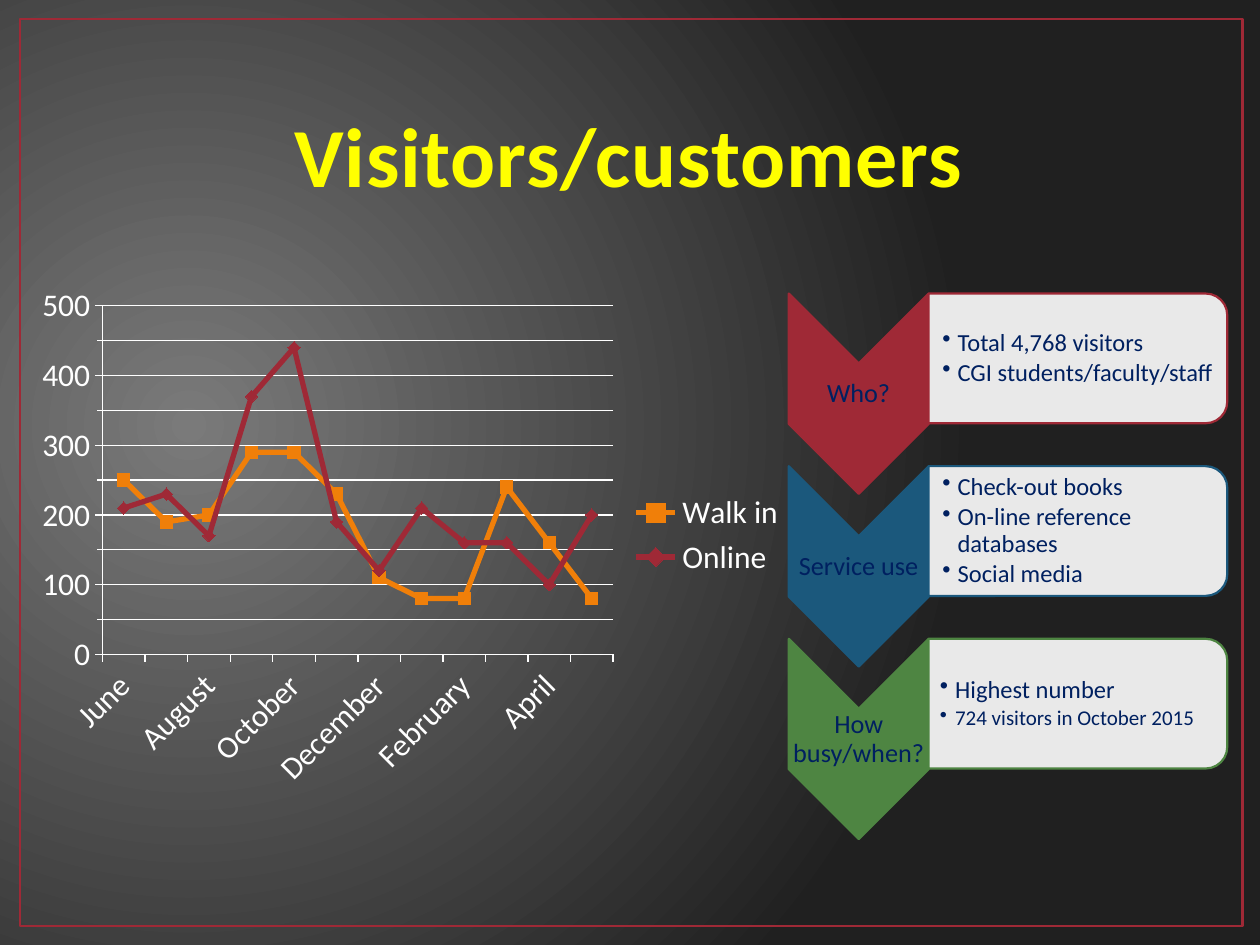
from dataclasses import dataclass

from lxml import etree
from pptx import Presentation
from pptx import util as u
from pptx.chart.data import CategoryChartData
from pptx.dml.color import RGBColor
from pptx.enum import chart as charts, shapes, text
from pptx.oxml.ns import qn

FONT = "Calibri"
NAVY = "002060"
WHITE = "FFFFFF"
STEP = 1.37


@dataclass
class Bullet:
    wording: str
    size: float = 14


@dataclass
class Topic:
    label: str
    color: str
    bullets: list[Bullet]
    inset: float = 0.11


TOPICS = [
    Topic("Who?", "9F2936", [Bullet("Total 4,768 visitors"), Bullet("CGI students/faculty/staff")]),
    Topic("Service use", "1B587C", [Bullet("Check-out books"), Bullet("On-line reference databases"),
                                    Bullet("Social media")]),
    Topic("How busy/when?", "4E8542", [Bullet("Highest number"),
                                       Bullet("724 visitors in October 2015", 12)], 0.09),
]
MONTHS = ["June", "July", "August", "September", "October", "November",
          "December", "January", "February", "March", "April", "May"]
SERIES = [
    ("Walk in", "F07F09", charts.XL_MARKER_STYLE.SQUARE,
     [250, 190, 200, 290, 290, 230, 110, 80, 80, 240, 160, 80]),
    ("Online", "9F2936", charts.XL_MARKER_STYLE.DIAMOND,
     [210, 230, 170, 370, 440, 190, 120, 210, 160, 160, 100, 200]),
]


def rgb(color: str) -> RGBColor:
    return RGBColor.from_string(color)


def add_child(parent, tag: str, **attributes: str):
    return etree.SubElement(parent, qn(tag), attributes)


def style_font(font, size: float, color: str, bold: bool = False) -> None:
    font.name = FONT
    font.size = u.Pt(size)
    font.bold = bold
    font.color.rgb = rgb(color)


def add_background(slide) -> None:
    fill = slide.background.fill
    fill.gradient()
    for stop, color in zip(fill.gradient_stops, ("7A7A7A", "202020")):
        stop.color.rgb = rgb(color)
    gradient = slide.element.find(".//" + qn("a:gradFill"))
    gradient.remove(gradient.find(qn("a:lin")))
    circle = add_child(gradient, "a:path", path="circle")
    add_child(circle, "a:fillToRect", l="15000", t="50000", r="85000", b="60000")


def add_shape(slide, kind, box: tuple, line: str, width: float, fill: str = "", rotation: float = 0):
    shape = slide.shapes.add_shape(kind, *map(u.Inches, box))
    shape.shadow.inherit = False
    shape.rotation = rotation
    style_line(shape.line, line, width)
    if fill:
        shape.fill.solid()
        shape.fill.fore_color.rgb = rgb(fill)
    else:
        shape.fill.background()
    return shape


def add_text_frame(slide, box: tuple, anchor, left_inset: float, inset: float):
    frame = slide.shapes.add_textbox(*map(u.Inches, box)).text_frame
    frame.word_wrap = True
    frame.vertical_anchor = anchor
    frame.margin_left = u.Inches(left_inset)
    frame.margin_top = frame.margin_right = frame.margin_bottom = u.Inches(inset)
    return frame


def set_spacing(paragraph, after: int):
    paragraph.line_spacing = 0.9
    properties = paragraph._p.get_or_add_pPr()
    add_child(add_child(properties, "a:spcAft"), "a:spcPct", val=str(after * 1000))
    return properties


def add_title(slide) -> None:
    frame = add_text_frame(slide, (0.75, 0.84, 8.43, 0.83), text.MSO_ANCHOR.BOTTOM, 0.1, 0.05)
    frame.text = "Visitors/customers"
    paragraph = frame.paragraphs[0]
    paragraph.alignment = text.PP_ALIGN.CENTER
    style_font(paragraph.runs[0].font, 48, "FFFF00", True)
    paragraph.runs[0]._r.get_or_add_rPr().set("spc", "50")


def add_topic(slide, topic: Topic, offset: float) -> None:
    add_shape(slide, shapes.MSO_SHAPE.CHEVRON, (6.02, 2.57 + offset, 1.59, 1.11),
              topic.color, 1.25, topic.color, 90)
    panel = add_shape(slide, shapes.MSO_SHAPE.ROUND_2_SAME_RECTANGLE, (8.04, 1.66 + offset, 1.03, 2.37),
                      topic.color, 1.25, WHITE, 90)
    panel_color = panel._element.spPr.find(qn("a:solidFill")).find(qn("a:srgbClr"))
    add_child(panel_color, "a:alpha", val="90000")

    label = add_text_frame(slide, (6.26, 2.89 + offset, 1.11, 0.48), text.MSO_ANCHOR.MIDDLE, 0.01, 0.01)
    label.text = topic.label
    paragraph = label.paragraphs[0]
    paragraph.alignment = text.PP_ALIGN.CENTER
    set_spacing(paragraph, 35)
    style_font(paragraph.runs[0].font, 15, NAVY)

    details = add_text_frame(slide, (7.37, 2.38 + offset, 2.32, 0.93), text.MSO_ANCHOR.MIDDLE,
                             topic.inset, 0.01)
    details.text = "\n".join(bullet.wording for bullet in topic.bullets)
    for paragraph, bullet in zip(details.paragraphs, topic.bullets):
        paragraph.level = 1
        properties = set_spacing(paragraph, 15)
        indent = u.Inches(0.12)
        properties.set("marL", str(indent))
        properties.set("indent", str(-indent))
        add_child(properties, "a:buChar", char="•")
        style_font(paragraph.runs[0].font, bullet.size, NAVY)


def style_line(line, color: str, width: float) -> None:
    line.color.rgb = rgb(color)
    line.width = u.Pt(width)


def add_visitor_chart(slide) -> None:
    data = CategoryChartData()
    data.categories = MONTHS
    for name, _, _, values in SERIES:
        data.add_series(name, values)
    chart = slide.shapes.add_chart(charts.XL_CHART_TYPE.LINE_MARKERS,
                                   *map(u.Inches, (0.2, 2.18, 6.14, 4.13)), data).chart
    style_font(chart.font, 18, WHITE)
    chart.has_title = False
    chart.has_legend = True
    chart.legend.position = charts.XL_LEGEND_POSITION.RIGHT
    chart.legend.include_in_layout = False
    chart.plots[0].vary_by_categories = False
    for series, (_, color, marker, _) in zip(chart.plots[0].series, SERIES):
        series.smooth = False
        style_line(series.format.line, color, 3)
        series.marker.style = marker
        series.marker.size = 7
        series.marker.format.fill.solid()
        series.marker.format.fill.fore_color.rgb = rgb(color)
        style_line(series.marker.format.line, color, 0.75)

    months, visitors = chart.category_axis, chart.value_axis
    for axis in (months, visitors):
        axis.major_tick_mark = charts.XL_TICK_MARK.OUTSIDE
        style_line(axis.format.line, WHITE, 0.75)
    style_font(months.tick_labels.font, 18, WHITE)
    months._element.find(qn("c:txPr")).find(qn("a:bodyPr")).set("rot", "-2700000")
    skip = etree.Element(qn("c:tickLblSkip"), val="2")
    months._element.find(qn("c:noMultiLvlLbl")).addprevious(skip)
    visitors.minimum_scale, visitors.maximum_scale = 0, 500
    visitors.major_unit, visitors.minor_unit = 100, 50
    visitors.minor_tick_mark = charts.XL_TICK_MARK.OUTSIDE
    visitors.has_major_gridlines = visitors.has_minor_gridlines = True
    for gridlines in (visitors.major_gridlines, visitors._element.minorGridlines):
        if gridlines is visitors.major_gridlines:
            style_line(gridlines.format.line, WHITE, 0.75)
    style_line(visitors.major_gridlines.format.line, WHITE, 0.75)
    minor_properties = add_child(visitors._element.find(qn("c:minorGridlines")), "c:spPr")
    minor_fill = add_child(add_child(minor_properties, "a:ln", w=str(u.Pt(0.75))), "a:solidFill")
    add_child(minor_fill, "a:srgbClr", val=WHITE)

    plot_area = chart._chartSpace.chart.plotArea
    for old_layout in plot_area.findall(qn("c:layout")):
        plot_area.remove(old_layout)
    layout = etree.Element(qn("c:layout"))
    plot_area.insert(0, layout)
    manual = add_child(layout, "c:manualLayout")
    for tag, value in (("layoutTarget", "inner"), ("xMode", "edge"), ("yMode", "edge"),
                       ("x", "0.1"), ("y", "0.06"), ("w", "0.66"), ("h", "0.67")):
        add_child(manual, "c:" + tag, val=value)


def main() -> None:
    presentation = Presentation()
    presentation.slide_width, presentation.slide_height = u.Inches(10), u.Inches(7.5)
    slide = presentation.slides.add_slide(presentation.slide_layouts[6])
    add_background(slide)
    add_shape(slide, shapes.MSO_SHAPE.RECTANGLE, (0.16, 0.15, 9.7, 7.2), "9F2936", 1.5)
    for index, topic in enumerate(TOPICS):
        add_topic(slide, topic, index * STEP)
    add_title(slide)
    add_visitor_chart(slide)
    presentation.save("out.pptx")


if __name__ == "__main__":
    main()
